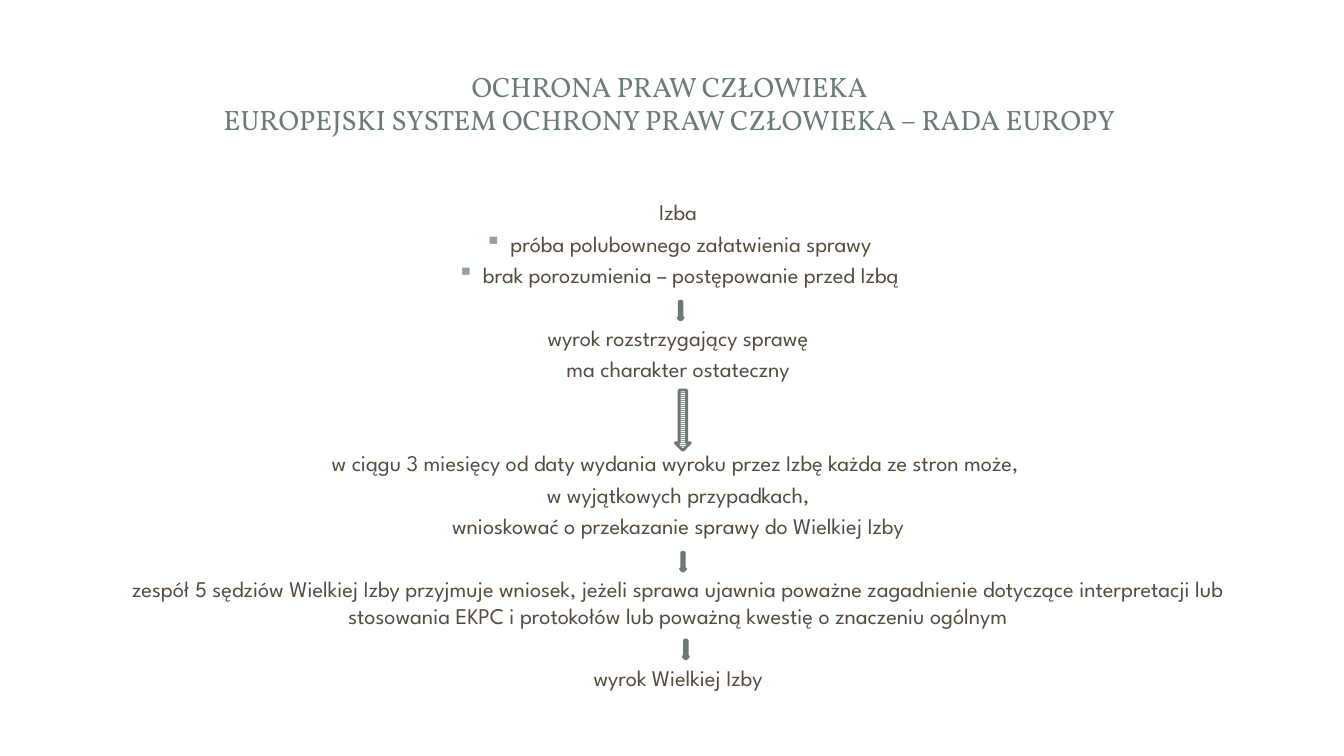
from dataclasses import dataclass

from lxml.etree import SubElement
from pptx import Presentation
from pptx.dml.color import RGBColor
from pptx.enum.dml import MSO_PATTERN_TYPE as Pattern
from pptx.enum.shapes import MSO_SHAPE as Shape
from pptx.enum.text import MSO_ANCHOR as Anchor, PP_ALIGN as Align
from pptx.oxml.ns import qn
from pptx.slide import Slide
from pptx.util import Cm, Pt

COLORS = {"title": "6B7D72", "body": "564B3C", "accent": "93A299",
          "outline": "6D7871", "paper": "FFFFFF"}
BODY_SIZE = 16
SPACE_BEFORE = 3.2
LINE_PITCH = 22.4


@dataclass(frozen=True)
class Step:
    """One paragraph of the procedure, with the lines left free above it."""
    text: str
    bullet: bool = False
    free_lines: int = 0


@dataclass(frozen=True)
class Arrow:
    """A down arrow, measured in centimetres."""
    left: float
    top: float
    width: float = 0.13
    height: float = 0.48
    striped: bool = False


TITLE = ["OCHRONA PRAW CZŁOWIEKA\v"
         "EUROPEJSKI SYSTEM OCHRONY PRAW CZŁOWIEKA – RADA EUROPY"]
STEPS = [
    Step("Izba"),
    Step("próba polubownego załatwienia sprawy", bullet=True),
    Step("brak porozumienia – postępowanie przed Izbą", bullet=True),
    Step("wyrok rozstrzygający sprawę", free_lines=1),
    Step("ma charakter ostateczny"),
    Step("w ciągu 3 miesięcy od daty wydania wyroku przez Izbę "
         "każda ze stron może, ", free_lines=2),
    Step("w wyjątkowych przypadkach,"),
    Step("wnioskować o przekazanie sprawy do Wielkiej Izby"),
    Step("zespół 5 sędziów Wielkiej Izby przyjmuje wniosek, jeżeli sprawa "
         "ujawnia poważne zagadnienie dotyczące interpretacji lub stosowania "
         "EKPC i protokołów lub poważną kwestię o znaczeniu ogólnym",
         free_lines=1),
    Step("wyrok Wielkiej Izby", free_lines=1),
]
ARROWS = [
    Arrow(17.09, 7.59),
    Arrow(17.02, 9.83, width=0.38, height=1.52, striped=True),
    Arrow(17.15, 13.92),
    Arrow(17.22, 16.13),
]


def rgb(name: str) -> RGBColor:
    """Look up a named colour."""
    return RGBColor.from_string(COLORS[name])


def add_text(page: Slide, texts: list[str], *, left: float, top: float,
             width: float, height: float, font: str, size: float, color: str,
             anchor: Anchor = Anchor.TOP) -> list:
    """Add a wrapped, centred text box and return its paragraphs."""
    box = page.shapes.add_textbox(Cm(left), Cm(top), Cm(width), Cm(height))
    frame = box.text_frame
    frame.word_wrap = True
    frame.vertical_anchor = anchor
    frame.text = "\n".join(texts)
    for para in frame.paragraphs:
        para.alignment = Align.CENTER
        for span in para.runs:
            span.font.name = font
            span.font.size = Pt(size)
            span.font.color.rgb = rgb(color)
    return list(frame.paragraphs)


def format_step(para, step: Step) -> None:
    """Set the spacing, indent and bullet of one step."""
    para.space_before = Pt(SPACE_BEFORE + step.free_lines * LINE_PITCH)
    properties = para._p.get_or_add_pPr()
    properties.set("marL", str(Cm(0.95 if step.bullet else 0.3)))
    properties.set("indent", str(Cm(-0.64 if step.bullet else 0)))
    if step.bullet:
        color = SubElement(properties, qn("a:buClr"))
        SubElement(color, qn("a:srgbClr"), val=COLORS["accent"])
        SubElement(properties, qn("a:buChar"), char="▪")


def add_arrow(page: Slide, arrow: Arrow) -> None:
    """Draw one outlined down arrow."""
    shape = page.shapes.add_shape(Shape.DOWN_ARROW, Cm(arrow.left), Cm(arrow.top),
                                  Cm(arrow.width), Cm(arrow.height))
    shape.shadow.inherit = False
    if arrow.striped:
        shape.fill.patterned()
        shape.fill.pattern = Pattern.NARROW_HORIZONTAL
        shape.fill.fore_color.rgb = rgb("accent")
        shape.fill.back_color.rgb = rgb("paper")
    else:
        shape.fill.solid()
        shape.fill.fore_color.rgb = rgb("accent")
    shape.line.color.rgb = rgb("outline")
    shape.line.width = Pt(2)


def main() -> None:
    """Build the slide and save it."""
    deck = Presentation()
    deck.slide_width, deck.slide_height = Cm(33.87), Cm(19.05)
    page = deck.slides.add_slide(deck.slide_layouts[6])
    add_text(page, TITLE, left=1.57, top=1.14, width=30.61, height=2.9,
             font="Vollkorn", size=20, color="title", anchor=Anchor.MIDDLE)
    paras = add_text(page, [step.text for step in STEPS], left=1.7, top=4.88,
                     width=30.48, height=13.36, font="League Spartan",
                     size=BODY_SIZE, color="body")
    for para, step in zip(paras, STEPS):
        format_step(para, step)
    for arrow in ARROWS:
        add_arrow(page, arrow)
    deck.save("out.pptx")


if __name__ == "__main__":
    main()
